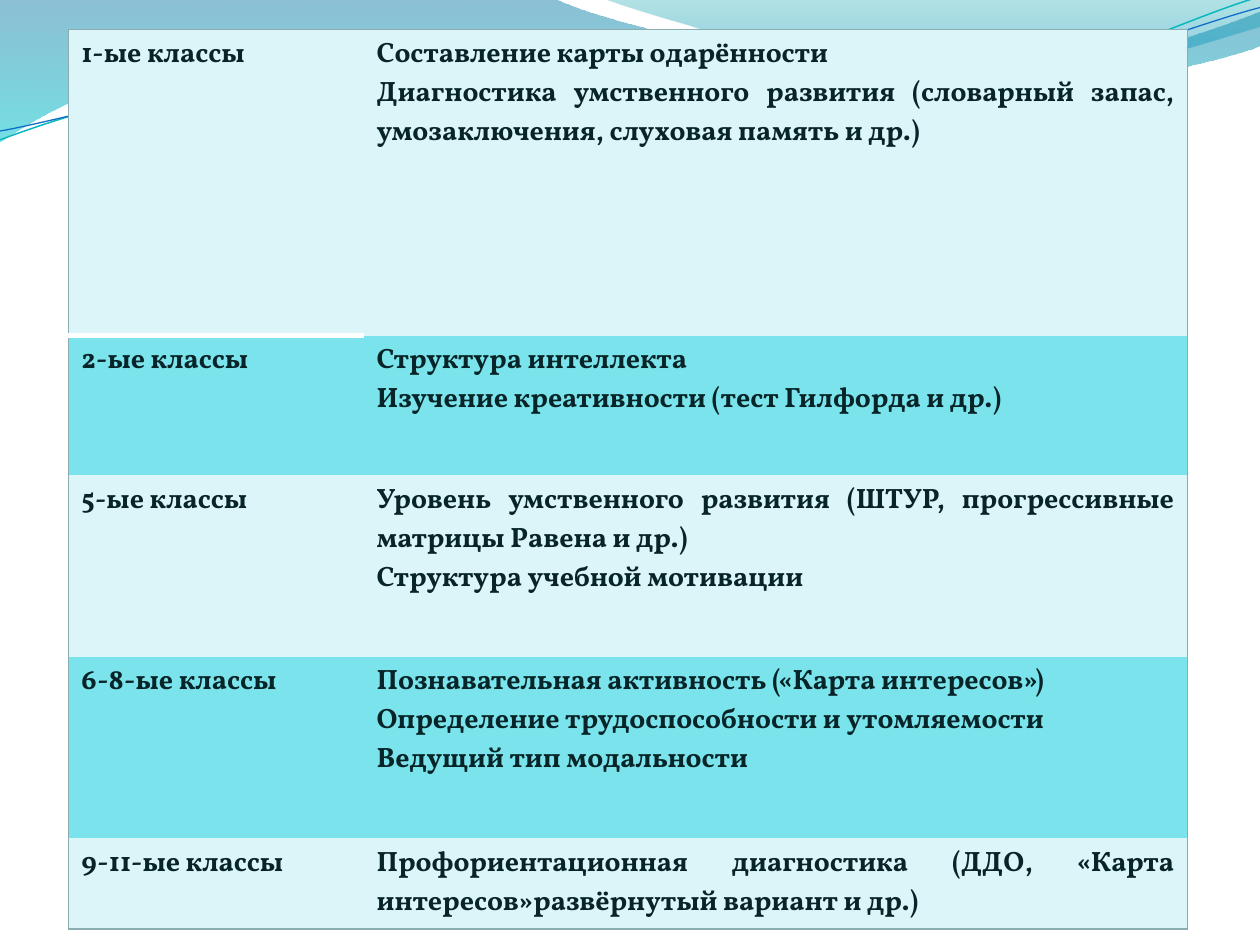
"""Build a slide with a table of diagnostics by school year over a wave header."""
from dataclasses import dataclass
from math import cos, radians, sin
from typing import Optional

from lxml.etree import SubElement
from pptx import Presentation
from pptx.dml.color import RGBColor
from pptx.enum.text import PP_ALIGN
from pptx.oxml import parse_xml
from pptx.oxml.ns import nsdecls, qn
from pptx.util import Inches, Pt

SLIDE_WIDTH, SLIDE_HEIGHT = Inches(10), Inches(7.5)
GRID_COLUMNS, GRID_ROWS = 100, 75
NO_TABLE_STYLE = "{2D5ABB26-0587-4C30-8999-92F81FD0307C}"
COLORS = {
    "text": "072428", "pale": "DBF5F9", "bright": "7AE3EB",
    "frame": "8BADB0", "divider": "FFFFFF",
    "deep": "0074A1", "aqua": "00C6CF", "teal": "00A1A9", "sky": "008BBF",
    "teal_line": "0AB8BF", "blue_line": "0F6FC6",
}
TEXT_FORMAT = {"name": "Vollkorn", "size": Pt(16), "bold": True}
LINE_TILT = -2.7
LINE_CENTER = (49.9, 5.8)

Point = tuple[float, float]


@dataclass(frozen=True)
class Stop:
    position: float
    color: str
    opacity: int


@dataclass(frozen=True)
class Wave:
    """An outline in grid units; pairs are line ends, sextets are curves."""
    start: Point
    segments: tuple[tuple[float, ...], ...]
    stops: tuple[Stop, ...] = ()
    line_color: Optional[str] = None
    line_width: float = 0
    tilt: float = 0


@dataclass(frozen=True)
class Grade:
    name: str
    topics: tuple[str, ...]
    height: float


WAVES = (
    Wave((-0.1, 0), (
        (44, -0.1), (47.6, 1.7, 66.4, 6.3, 75.8, 6.3),
        (85.3, 6.3, 95.8, 2.6, 100, 0.9), (100.1, 3.6),
        (98.3, 4.4, 87, 7.6, 74.6, 7.5), (62.2, 7.5, 38.2, 2.8, 25.7, 3.4),
        (12.9, 3.6, 4.6, 8.3, -0.1, 11.3)),
        (Stop(0, "deep", 45), Stop(1, "aqua", 55))),
    Wave((47.9, -0.1), (
        (50.9, 1.1, 68.2, 6.2, 76.9, 6.5), (85.6, 6.9, 96.1, 3.2, 100, 2.1), (100, 0)),
        (Stop(0, "teal", 30), Stop(0.8, "sky", 45))),
    Wave((0, 11.1), (
        (4.8, 9.3, 15.8, 5.7, 27.7, 5.2), (39.5, 4.7, 59.3, 8.9, 71.3, 8),
        (83.3, 7.1, 93.8, 1.5, 99.8, -0.2)),
        line_color="teal_line", line_width=0.85, tilt=LINE_TILT),
    Wave((0, 10.4), (
        (4.7, 9.6, 16.4, 6.1, 28.3, 5.6), (40.3, 5.1, 59.7, 8.4, 71.7, 7.5),
        (83.6, 6.7, 94.1, 2.1, 100, 0.6)),
        line_color="blue_line", line_width=0.75, tilt=LINE_TILT),
)
TABLE_LEFT, TABLE_TOP = 5.46, 2.33
COLUMN_WIDTHS = (23.43, 65.35)
GRADES = (
    Grade("1-ые классы", (
        "Составление карты одарённости",
        "Диагностика умственного развития (словарный запас, умозаключения, "
        "слуховая память и др.)"), 24.3),
    Grade("2-ые классы", (
        "Структура интеллекта",
        "Изучение креативности (тест Гилфорда и др.)"), 11.1),
    Grade("5-ые классы", (
        "Уровень умственного развития (ШТУР, прогрессивные матрицы Равена и др.)",
        "Структура учебной мотивации"), 14.4),
    Grade("6-8-ые классы", (
        "Познавательная активность («Карта интересов»)",
        "Определение трудоспособности и утомляемости",
        "Ведущий тип модальности"), 14.4),
    Grade("9-11-ые классы", (
        "Профориентационная диагностика (ДДО, «Карта интересов»развёрнутый "
        "вариант и др.)",), 6.1),
)


def across(columns: float) -> int:
    """Convert grid columns to a length."""
    return round(columns * SLIDE_WIDTH / GRID_COLUMNS)


def down(rows: float) -> int:
    """Convert grid rows to a length."""
    return round(rows * SLIDE_HEIGHT / GRID_ROWS)


def color(name: str) -> RGBColor:
    """Look up a named colour."""
    return RGBColor.from_string(COLORS[name])


def place(column: float, row: float, tilt: float) -> tuple[int, int]:
    """Convert a grid point to lengths, levelled for a shape that is then tilted."""
    angle = radians(-tilt)
    x, y = column - LINE_CENTER[0], row - LINE_CENTER[1]
    return (across(LINE_CENTER[0] + x * cos(angle) - y * sin(angle)),
            down(LINE_CENTER[1] + x * sin(angle) + y * cos(angle)))


def bend(shape, segments: list[list[tuple[int, int]]]) -> None:
    """Turn the straight segments that have control points into curves."""
    left, top = shape.left, shape.top
    for line, points in zip(list(shape._element.iter(qn("a:lnTo"))), segments):
        if len(points) == 3:
            marks = "".join(f'<a:pt x="{x - left}" y="{y - top}"/>' for x, y in points)
            line.getparent().replace(line, parse_xml(
                f'<a:cubicBezTo {nsdecls("a")}>{marks}</a:cubicBezTo>'))


def draw_wave(slide, wave: Wave) -> None:
    """Draw a wave as a translucent band or as a thin line."""
    segments = [[place(*pair, wave.tilt) for pair in zip(segment[::2], segment[1::2])]
                for segment in wave.segments]
    builder = slide.shapes.build_freeform(*place(*wave.start, wave.tilt))
    builder.add_line_segments([points[-1] for points in segments], close=bool(wave.stops))
    shape = builder.convert_to_shape()
    bend(shape, segments)
    shape.rotation = wave.tilt
    shape.shadow.inherit = False
    if not wave.stops:
        shape.fill.background()
        shape.line.color.rgb = color(wave.line_color)
        shape.line.width = Pt(wave.line_width)
        return
    shape.line.fill.background()
    shape.fill.gradient()
    shape.fill.gradient_angle = 270
    for target, stop in zip(shape.fill.gradient_stops, wave.stops):
        target.position = stop.position
        target.color.rgb = color(stop.color)
    for element, stop in zip(shape._element.spPr.iter(qn("a:srgbClr")), wave.stops):
        SubElement(element, qn("a:alpha"), val=str(stop.opacity * 1000))


def set_borders(cell, borders: dict[str, tuple[str, float]]) -> None:
    """Give a cell the borders named by side, leaving the other sides empty."""
    properties = cell._tc.get_or_add_tcPr()
    for index, side in enumerate("LRTB"):
        name, width = borders.get(side, (None, 0))
        paint = (f'<a:solidFill><a:srgbClr val="{COLORS[name]}"/></a:solidFill>'
                 if name else "<a:noFill/>")
        properties.insert(index, parse_xml(
            f'<a:ln{side} {nsdecls("a")} w="{Pt(width)}">{paint}</a:ln{side}>'))


def fill_cell(cell, lines: tuple[str, ...], fill: str, alignment: PP_ALIGN) -> None:
    """Write one paragraph per line into a cell and colour it."""
    cell.fill.solid()
    cell.fill.fore_color.rgb = color(fill)
    cell.text = "\n".join(lines)
    for paragraph in cell.text_frame.paragraphs:
        paragraph.alignment = alignment
        font = paragraph.runs[0].font
        font.color.rgb = color("text")
        for attribute, value in TEXT_FORMAT.items():
            setattr(font, attribute, value)


def draw_table(slide, grades: tuple[Grade, ...]) -> None:
    """Draw the framed table with one banded row per grade."""
    frame = slide.shapes.add_table(
        len(grades), len(COLUMN_WIDTHS), across(TABLE_LEFT), down(TABLE_TOP),
        across(sum(COLUMN_WIDTHS)), down(sum(grade.height for grade in grades)))
    table = frame.table
    table._tbl.tblPr.find(qn("a:tableStyleId")).text = NO_TABLE_STYLE
    for column, width in zip(table.columns, COLUMN_WIDTHS):
        column.width = across(width)
    last = len(grades) - 1
    for index, grade in enumerate(grades):
        table.rows[index].height = down(grade.height)
        fill = "bright" if index % 2 else "pale"
        contents = (("L", (grade.name,), PP_ALIGN.LEFT),
                    ("R", grade.topics, PP_ALIGN.JUSTIFY))
        for column, (outer_side, lines, alignment) in enumerate(contents):
            cell = table.cell(index, column)
            fill_cell(cell, lines, fill, alignment)
            sides = outer_side + "T" * (index == 0) + "B" * (index == last)
            borders = {side: ("frame", 0.75) for side in sides}
            if column == 0 and index < 2:
                borders["T" if index else "B"] = ("divider", 3)
            set_borders(cell, borders)


def main() -> None:
    """Build and save the presentation."""
    presentation = Presentation()
    presentation.slide_width, presentation.slide_height = SLIDE_WIDTH, SLIDE_HEIGHT
    slide = presentation.slides.add_slide(presentation.slide_layouts[6])
    for wave in WAVES:
        draw_wave(slide, wave)
    draw_table(slide, GRADES)
    presentation.save("out.pptx")


if __name__ == "__main__":
    main()
